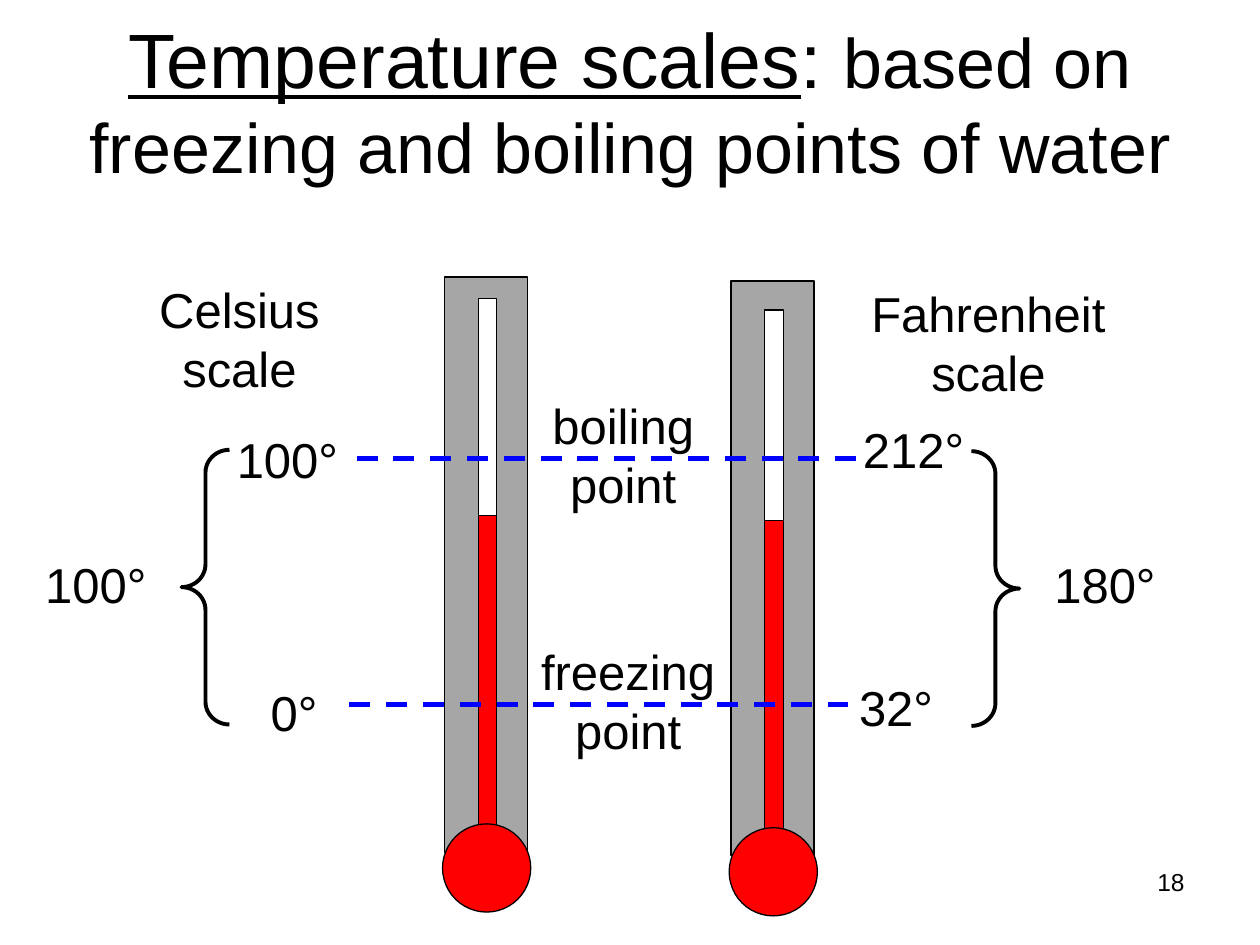
import pptx
import pptx.dml.color
import pptx.enum.dml
import pptx.enum.shapes
import pptx.enum.text
import pptx.oxml
import pptx.util

Pt = pptx.util.Pt
RGBColor = pptx.dml.color.RGBColor
SHAPE = pptx.enum.shapes.MSO_SHAPE
ALIGN = pptx.enum.text.PP_ALIGN
ANCHOR = pptx.enum.text.MSO_ANCHOR

BLACK = RGBColor(0x00, 0x00, 0x00)
WHITE = RGBColor(0xFF, 0xFF, 0xFF)
GRAY = RGBColor(0xA6, 0xA6, 0xA6)
RED = RGBColor(0xFF, 0x00, 0x00)
BLUE = RGBColor(0x00, 0x00, 0xFF)

EFFECT_LIST = ('<a:effectLst xmlns:a='
               '"http://schemas.openxmlformats.org/drawingml/2006/main"/>')


def add_outlined(shapes, kind, box, fill, line_width):
    """Add a black-outlined preset shape; a fill of None leaves it open."""
    shape = shapes.add_shape(kind, *map(Pt, box))
    shape.shadow.inherit = False
    if fill is None:
        shape.fill.background()
    else:
        shape.fill.solid()
        shape.fill.fore_color.rgb = fill
    shape.line.color.rgb = BLACK
    shape.line.width = Pt(line_width)
    return shape


def add_text(box, paragraphs, alignment=ALIGN.LEFT, wrap=False):
    """Add a text box; each paragraph is a list of (text, font values)."""
    shape = slide.shapes.add_textbox(*map(Pt, box))
    frame = shape.text_frame
    frame.word_wrap = wrap
    for index, runs in enumerate(paragraphs):
        paragraph = frame.paragraphs[0] if index == 0 else frame.add_paragraph()
        paragraph.alignment = alignment
        for text, values in runs:
            run = paragraph.add_run()
            run.text = text
            run.font.color.rgb = BLACK
            for name, value in ({"name": "Arial", "size": Pt(28)} | values).items():
                setattr(run.font, name, value)
    return shape


presentation = pptx.Presentation()
presentation.slide_width = Pt(720)
presentation.slide_height = Pt(540)
slide = presentation.slides.add_slide(presentation.slide_layouts[6])

title = add_text((0, 0, 720, 113.76), [[
    ("Temperature scales", {"size": Pt(44), "underline": True}),
    (": ", {"size": Pt(44)}),
    ("based on freezing and boiling points of water", {"size": Pt(40)}),
]], ALIGN.CENTER, wrap=True)
title.text_frame.vertical_anchor = ANCHOR.MIDDLE

# Thermometers: body, empty tube, liquid and bulb
# (left, top, tube left, tube width, tube top, liquid top, liquid bottom)
thermometers = [
    (254, 158.2, 273.6, 10, 170.6, 294.6, 484.6),
    (417.8, 160.4, 437, 10.8, 177.1, 297.4, 486),
]
for left, top, tube_left, tube_width, tube_top, liquid_top, liquid_bottom in thermometers:
    parts = slide.shapes.add_group_shape().shapes
    add_outlined(parts, SHAPE.RECTANGLE, (left, top, 47.5, 328.5), GRAY, 1)
    for start, end, fill in ((tube_top, liquid_top, WHITE),
                             (liquid_top, liquid_bottom, RED)):
        add_outlined(parts, SHAPE.RECTANGLE,
                     (tube_left, start, tube_width, end - start), fill, 0.75)
    add_outlined(parts, SHAPE.OVAL, (left - 1.1, top + 312.6, 50.4, 50.4), RED, 0.75)

# Boiling and freezing levels
for start, end, level in ((203.8, 491.8, 262.2), (199.6, 484.6, 402.5)):
    connector = slide.shapes.add_connector(
        pptx.enum.shapes.MSO_CONNECTOR.STRAIGHT,
        Pt(start), Pt(level), Pt(end), Pt(level))
    connector.line.color.rgb = BLUE
    connector.line.width = Pt(3)
    connector.line.dash_style = pptx.enum.dml.MSO_LINE.DASH
    connector._element.spPr.append(pptx.oxml.parse_xml(EFFECT_LIST))

# Degree values
degrees = [
    ("0°", 147.6, 386.6, 41),
    ("100°", 128.2, 241.9, 72.7),
    ("32°", 483.8, 383.8, 56.9),
    ("212°", 486, 236.2, 72.7),
    ("180°", 595.4, 313.2, 72.7),
    ("100°", 18.7, 313.2, 72.7),
]
for text, left, top, width in degrees:
    add_text((left, top, width, 41), [[(text, {})]])

# Two-line captions
captions = [
    ("boiling", "point", 308.2, 222.5, 95.8),
    ("freezing", "point", 301.7, 362.9, 114.5),
    ("Celsius", "scale", 83.5, 156.2, 106.6),
    ("Fahrenheit", "scale", 490.3, 158.4, 149),
]
for first, second, left, top, width in captions:
    add_text((left, top, width, 74.2), [[(first, {})], [(second, {})]], ALIGN.CENTER)

# Braces spanning each scale's range
for left, top, rotation in ((555.1, 257.8, 0), (103.7, 257, 180)):
    brace = add_outlined(slide.shapes, SHAPE.RIGHT_BRACE, (left, top, 27.4, 157), None, 2.25)
    brace.adjustments[0] = 0.475
    brace.adjustments[1] = 0.5
    brace.rotation = rotation

add_text((516.2, 491.8, 167.8, 37.4), [[("18", {"size": Pt(14)})]], ALIGN.RIGHT, wrap=True)

presentation.save("out.pptx")
